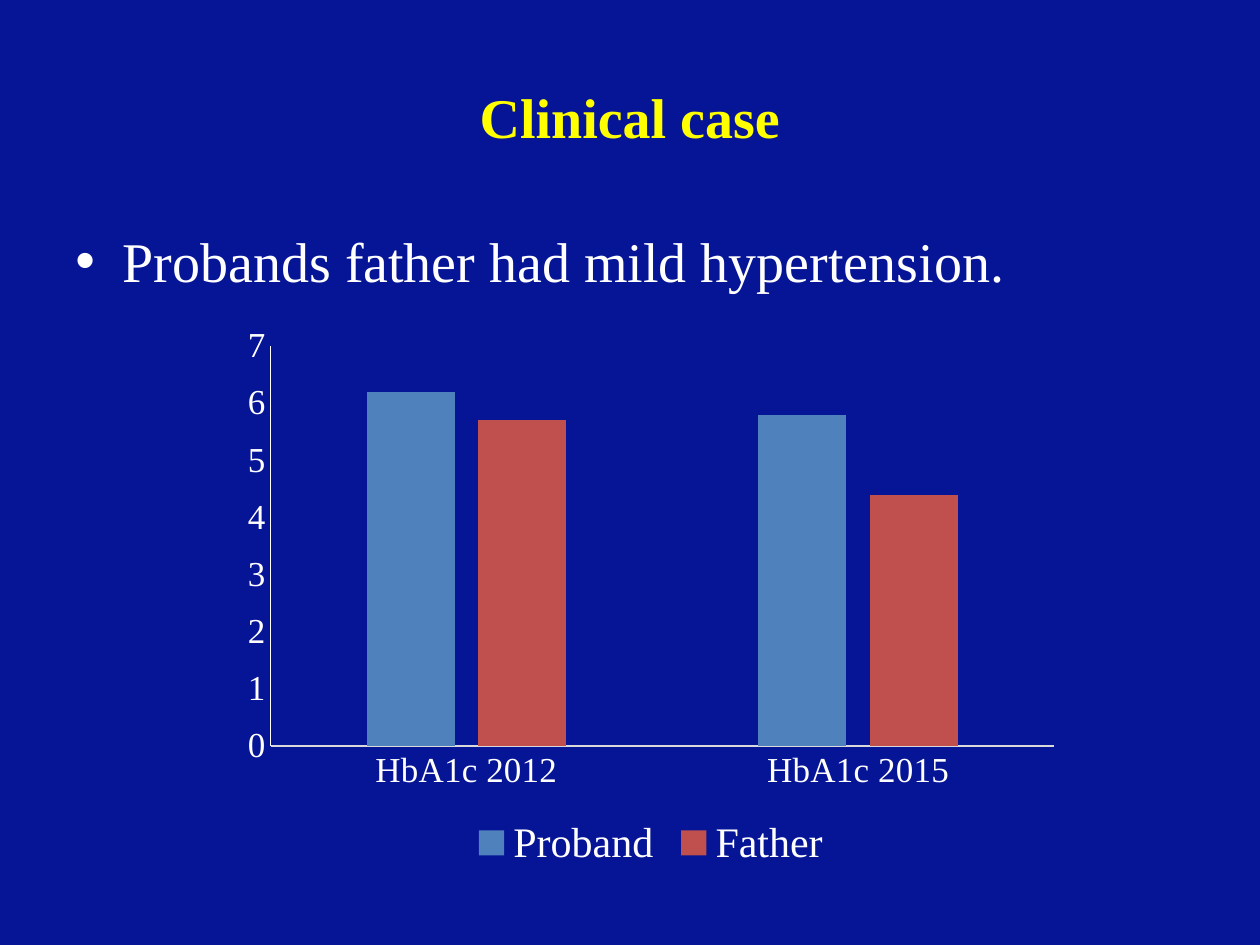
from dataclasses import dataclass

from lxml import etree
from pptx import Presentation
from pptx.chart.data import CategoryChartData
from pptx.dml.color import RGBColor
from pptx.enum.chart import XL_CHART_TYPE, XL_LEGEND_POSITION, XL_TICK_MARK
from pptx.enum.text import MSO_ANCHOR, PP_ALIGN
from pptx.oxml.ns import qn
from pptx.util import Pt

CLUSTERED = XL_CHART_TYPE.COLUMN_CLUSTERED
BOTTOM = XL_LEGEND_POSITION.BOTTOM
NO_TICK = XL_TICK_MARK.NONE
MIDDLE = MSO_ANCHOR.MIDDLE
CENTER = PP_ALIGN.CENTER


@dataclass(frozen=True)
class Theme:
    font: str = "Times New Roman"
    background: RGBColor = RGBColor.from_string("061496")
    title: RGBColor = RGBColor.from_string("FFFF00")
    text: RGBColor = RGBColor.from_string("FFFFFF")
    category_line: RGBColor = RGBColor.from_string("D9D9D9")
    proband: RGBColor = RGBColor.from_string("4F81BD")
    father: RGBColor = RGBColor.from_string("C0504D")
    heading_size: int = 32
    axis_size: int = 20
    legend_size: int = 24


theme = Theme()


def format_font(font, size, color, bold=False):
    values = {"name": theme.font, "size": Pt(size), "bold": bold}
    for name, value in values.items():
        setattr(font, name, value)
    font.color.rgb = color


presentation = Presentation()
presentation.slide_width, presentation.slide_height = Pt(720), Pt(540)
slide = presentation.slides.add_slide(presentation.slide_layouts[5])
slide.background.fill.solid()
slide.background.fill.fore_color.rgb = theme.background

# Title
title = slide.shapes.title
title_box = {"left": 36, "top": 21.6, "width": 648, "height": 90}
for name, value in title_box.items():
    setattr(title, name, Pt(value))
title.text_frame.vertical_anchor = MIDDLE
paragraph = title.text_frame.paragraphs[0]
paragraph.text = "Clinical case"
paragraph.alignment = CENTER
format_font(paragraph.runs[0].font, theme.heading_size, theme.title, bold=True)

# Bulleted statement
statement = slide.shapes.add_textbox(Pt(36), Pt(126), Pt(648), Pt(54))
statement.text_frame.word_wrap = True
paragraph = statement.text_frame.paragraphs[0]
paragraph.text = "Probands father had mild hypertension."
paragraph.space_before = Pt(6.4)
format_font(paragraph.runs[0].font, theme.heading_size, theme.text)
properties = paragraph._p.get_or_add_pPr()
properties.set("marL", str(Pt(27)))
properties.set("indent", str(Pt(-27)))
etree.SubElement(properties, qn("a:buFont"), typeface="Arial")
etree.SubElement(properties, qn("a:buChar"), char="•")

# HbA1c chart
chart_data = CategoryChartData()
chart_data.categories = ["HbA1c 2012", "HbA1c 2015"]
chart_data.add_series("Proband", [6.2, 5.8])
chart_data.add_series("Father", [5.7, 4.4])
chart = slide.shapes.add_chart(
    CLUSTERED, Pt(132), Pt(180), Pt(480), Pt(320), chart_data
).chart
chart.has_title = False
format_font(chart.font, theme.axis_size, theme.text)

plot = chart.plots[0]
plot_format = {"gap_width": 219, "overlap": -27, "vary_by_categories": False}
for name, value in plot_format.items():
    setattr(plot, name, value)
for series, color in zip(plot.series, [theme.proband, theme.father]):
    series.format.fill.solid()
    series.format.fill.fore_color.rgb = color

axis_format = {
    "major_tick_mark": NO_TICK,
    "minor_tick_mark": NO_TICK,
    "has_major_gridlines": False,
}
axis_lines = [
    (chart.category_axis, theme.category_line),
    (chart.value_axis, theme.text),
]
for axis, line_color in axis_lines:
    for name, value in axis_format.items():
        setattr(axis, name, value)
    axis.format.line.color.rgb = line_color
    axis.format.line.width = Pt(0.75)
    format_font(axis.tick_labels.font, theme.axis_size, theme.text)
chart.value_axis.minimum_scale = 0
chart.value_axis.maximum_scale = 7
chart.value_axis.major_unit = 1

chart.has_legend = True
chart.legend.position = BOTTOM
chart.legend.include_in_layout = False
format_font(chart.legend.font, theme.legend_size, theme.text)

presentation.save("out.pptx")
